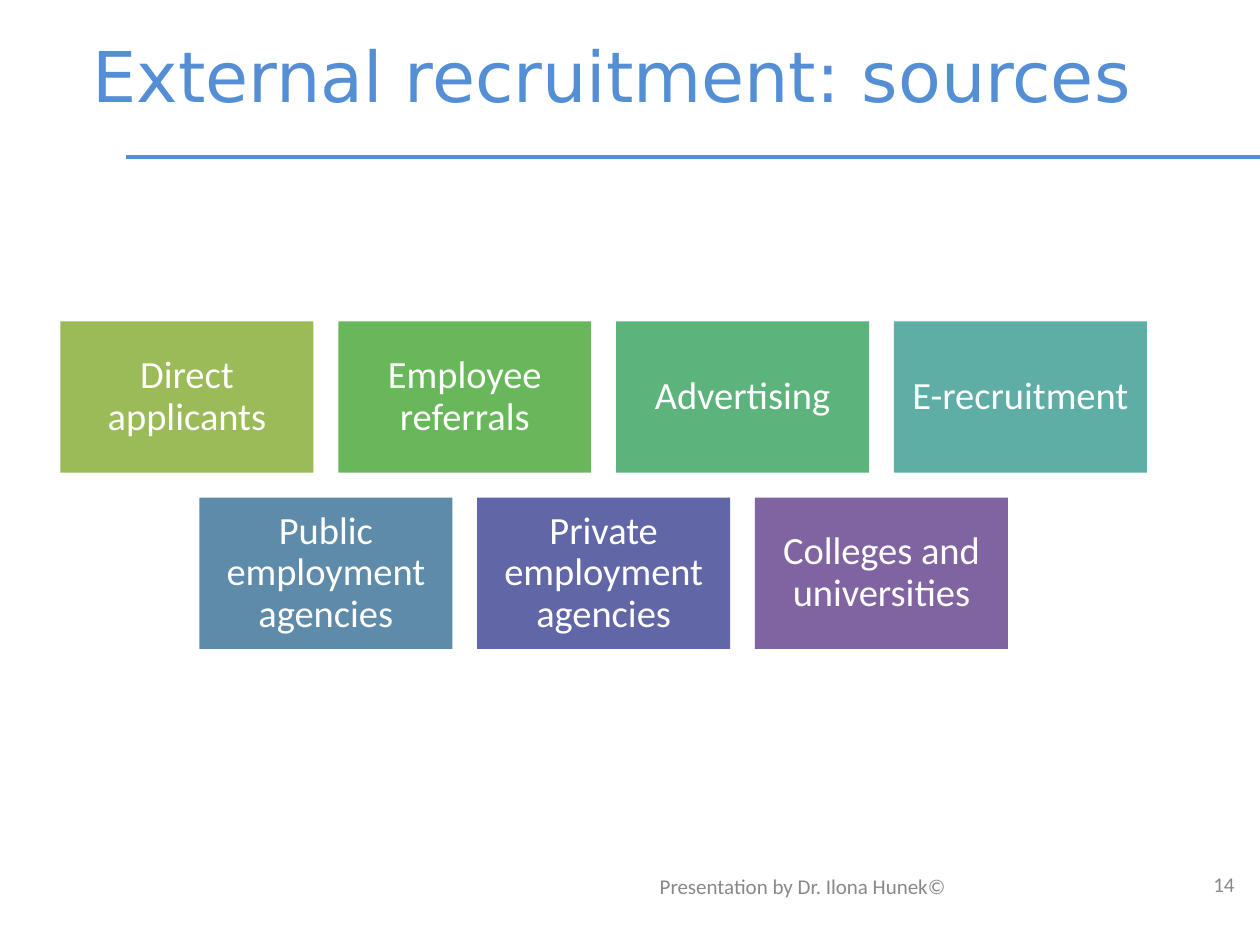
from lxml import etree
from pptx import Presentation
from pptx.dml.color import RGBColor
from pptx.enum.shapes import MSO_CONNECTOR, MSO_SHAPE
from pptx.enum.text import MSO_ANCHOR, PP_ALIGN
from pptx.oxml.ns import qn
from pptx.util import Cm, Pt

RECTANGLE = MSO_SHAPE.RECTANGLE
STRAIGHT = MSO_CONNECTOR.STRAIGHT
TOP, MIDDLE = MSO_ANCHOR.TOP, MSO_ANCHOR.MIDDLE
LEFT, CENTER = PP_ALIGN.LEFT, PP_ALIGN.CENTER

BLUE = RGBColor(0x54, 0x8E, 0xD4)
WHITE = RGBColor(0xFF, 0xFF, 0xFF)
GREY = RGBColor(0x88, 0x88, 0x88)
OLIVE = RGBColor(0x9B, 0xBA, 0x58)
GREEN = RGBColor(0x69, 0xB7, 0x5B)
SEA_GREEN = RGBColor(0x5C, 0xB3, 0x7B)
TEAL = RGBColor(0x5E, 0xAE, 0xA6)
STEEL_BLUE = RGBColor(0x5F, 0x8B, 0xAB)
INDIGO = RGBColor(0x61, 0x67, 0xA6)
PURPLE = RGBColor(0x80, 0x63, 0xA1)

TITLE = "External recruitment: sources"
SOURCE_ROWS = [
    [("Direct applicants", OLIVE), ("Employee referrals", GREEN),
     ("Advertising", SEA_GREEN), ("E-recruitment", TEAL)],
    [("Public employment agencies", STEEL_BLUE),
     ("Private employment agencies", INDIGO),
     ("Colleges and universities", PURPLE)],
]
# text, left, top, width, height in cm
FOOTERS = [
    ("Presentation by Dr. Ilona Hunek©", 13.3, 17.68, 5.84, 0.48),
    ("14", 24.46, 17.65, 0.6, 0.48),
]

TITLE_FONT = {"name": "DejaVu Sans", "size": Pt(40)}
CARD_FONT = {"name": "Calibri", "size": Pt(22)}
FOOTER_FONT = {"name": "Calibri", "size": Pt(12)}

CARD_WIDTH, CARD_HEIGHT, GAP = 5.1, 3.05, 0.5
ROWS_CENTER, ROWS_TOP = 12.17, 6.48


def write(shape, text, font, color, align, anchor, line_spacing=None):
    frame = shape.text_frame
    frame.text = text
    frame.word_wrap = True
    frame.vertical_anchor = anchor
    for side in ("left", "top", "right", "bottom"):
        setattr(frame, f"margin_{side}", 0)
    paragraph = frame.paragraphs[0]
    paragraph.alignment = align
    paragraph.line_spacing = line_spacing
    for name, value in font.items():
        setattr(paragraph.runs[0].font, name, value)
    paragraph.runs[0].font.color.rgb = color


def add_heading(page):
    rule = page.shapes.add_connector(
        STRAIGHT, Cm(2.54), Cm(3.17), Cm(25.4), Cm(3.17))
    rule.line.color.rgb = BLUE
    rule.line.width = Pt(2)
    etree.SubElement(rule.element.spPr, qn("a:effectLst"))

    title = page.shapes.title
    title.left, title.top = Cm(1.87), Cm(0.65)
    title.width, title.height = Cm(21.23), Cm(1.65)
    write(title, TITLE, TITLE_FONT, BLUE, LEFT, TOP)


def add_source_cards(page):
    for row, sources in enumerate(SOURCE_ROWS):
        row_width = len(sources) * (CARD_WIDTH + GAP) - GAP
        row_left = ROWS_CENTER - row_width / 2
        top = ROWS_TOP + row * (CARD_HEIGHT + GAP)
        for column, (text, color) in enumerate(sources):
            left = row_left + column * (CARD_WIDTH + GAP)
            card = page.shapes.add_shape(
                RECTANGLE, Cm(left), Cm(top), Cm(CARD_WIDTH), Cm(CARD_HEIGHT))
            card.shadow.inherit = False
            card.fill.solid()
            card.fill.fore_color.rgb = color
            card.line.fill.background()
            write(card, text, CARD_FONT, WHITE, CENTER, MIDDLE, 0.9)


def add_footers(page):
    for text, *place in FOOTERS:
        box = page.shapes.add_textbox(*map(Cm, place))
        write(box, text, FOOTER_FONT, GREY, LEFT, TOP, Pt(12.4))


def main():
    deck = Presentation()
    deck.slide_width, deck.slide_height = Cm(25.4), Cm(19.05)
    page = deck.slides.add_slide(deck.slide_layouts.get_by_name("Title Only"))
    add_heading(page)
    add_source_cards(page)
    add_footers(page)
    deck.save("out.pptx")


if __name__ == "__main__":
    main()
